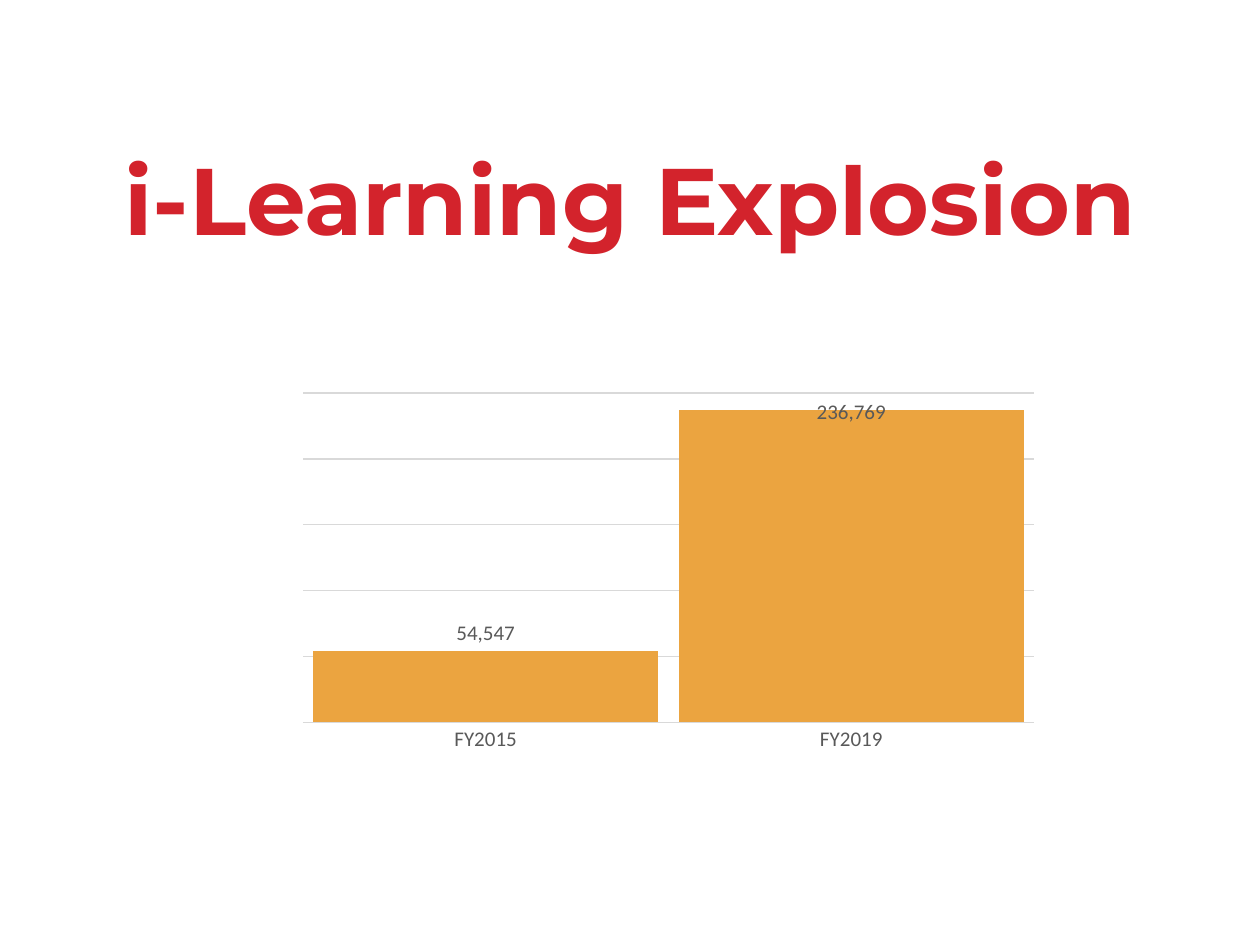
from dataclasses import dataclass

import pptx
import pptx.chart.data
import pptx.dml.color
import pptx.enum.chart
import pptx.enum.text
import pptx.oxml
import pptx.util
from pptx.oxml.ns import nsdecls

Inches = pptx.util.Inches
COLORS = {"title": "D3232C", "bar": "EBA440", "text": "595959", "line": "D9D9D9"}
NUMBER_FORMAT = "#,##0"


@dataclass
class Box:
    left: float
    top: float
    width: float
    height: float


@dataclass
class Enrollment:
    year: str
    count: int


def rgb(name: str) -> pptx.dml.color.RGBColor:
    return pptx.dml.color.RGBColor.from_string(COLORS[name])


def format_font(font, *, size: float, color: str, name: str = "Calibri",
                bold: bool = False) -> None:
    font.name, font.size, font.bold = name, pptx.util.Pt(size), bold
    font.color.rgb = rgb(color)


def write_text(tf, text: str, **font_format) -> None:
    tf.word_wrap = True
    tf.vertical_anchor = pptx.enum.text.MSO_ANCHOR.MIDDLE
    p = tf.paragraphs[0]
    p.alignment = pptx.enum.text.PP_ALIGN.CENTER
    r = p.add_run()
    r.text = text
    format_font(r.font, **font_format)


def format_line(line) -> None:
    line.color.rgb = rgb("line")
    line.width = pptx.util.Pt(0.75)


def manual_layout(**settings):
    items = "".join(f'<c:{tag} val="{val}"/>' for tag, val in settings.items())
    return pptx.oxml.parse_xml(
        f'<c:layout {nsdecls("c")}><c:manualLayout>{items}</c:manualLayout></c:layout>')


def add_column_chart(s, box: Box, rows: list[Enrollment]):
    data = pptx.chart.data.CategoryChartData(number_format=NUMBER_FORMAT)
    data.categories = [row.year for row in rows]
    data.add_series("Series 1", [row.count for row in rows])
    chart = s.shapes.add_chart(
        pptx.enum.chart.XL_CHART_TYPE.COLUMN_CLUSTERED,
        Inches(box.left), Inches(box.top), Inches(box.width), Inches(box.height),
        data).chart
    chart.has_legend = chart.has_title = False
    chart.font.name, chart.font.size = "Calibri", pptx.util.Pt(10)

    # Axes and gridlines
    no_tick = pptx.enum.chart.XL_TICK_MARK.NONE
    cat = chart.category_axis
    cat.major_tick_mark = cat.minor_tick_mark = no_tick
    format_font(cat.tick_labels.font, size=12, color="text")
    format_line(cat.format.line)
    val = chart.value_axis
    val.minimum_scale, val.maximum_scale, val.major_unit = 0, 250000, 50000
    val.has_major_gridlines = True
    format_line(val.major_gridlines.format.line)
    val.visible = False

    # Columns and their values
    plot = chart.plots[0]
    plot.gap_width, plot.vary_by_categories = 6, False
    series = plot.series[0]
    series.format.fill.solid()
    series.format.fill.fore_color.rgb = rgb("bar")
    labels = series.data_labels
    labels.show_value = True
    labels.number_format, labels.number_format_is_linked = NUMBER_FORMAT, False
    labels.position = pptx.enum.chart.XL_LABEL_POSITION.OUTSIDE_END
    format_font(labels.font, size=12, color="text")

    # Plot area fills the chart down to the category labels
    area = chart._chartSpace.chart.plotArea
    for old in area.findall(pptx.oxml.ns.qn("c:layout")):
        area.remove(old)
    area.insert(0, manual_layout(layoutTarget="inner", xMode="edge", yMode="edge",
                                 x=0.11, y=0.09, w=0.87, h=0.84))
    return chart


def lower_label(point, offset: float) -> None:
    label = point.data_label
    format_font(label.font, size=12, color="text")
    label.position = pptx.enum.chart.XL_LABEL_POSITION.OUTSIDE_END
    idx = label._get_or_add_dLbl().find(pptx.oxml.ns.qn("c:idx"))
    idx.addnext(manual_layout(x=0, y=offset))


def main() -> None:
    prs = pptx.Presentation()
    prs.slide_width, prs.slide_height = Inches(10), Inches(7.5)
    s = prs.slides.add_slide(prs.slide_layouts[5])

    # Title
    title = s.shapes.title
    title.left, title.top = Inches(0), Inches(0.3)
    title.width, title.height = Inches(10), Inches(2.54)
    write_text(title.text_frame, "i-Learning Explosion", size=54,
               color="title", name="Montserrat", bold=True)

    # Enrollment chart
    rows = [Enrollment("FY2015", 54547), Enrollment("FY2019", 236769)]
    chart = add_column_chart(s, Box(1.67, 2.84, 6.67, 3.13), rows)
    lower_label(chart.plots[0].series[0].points[1], 0.05)

    prs.save("out.pptx")


if __name__ == "__main__":
    main()
